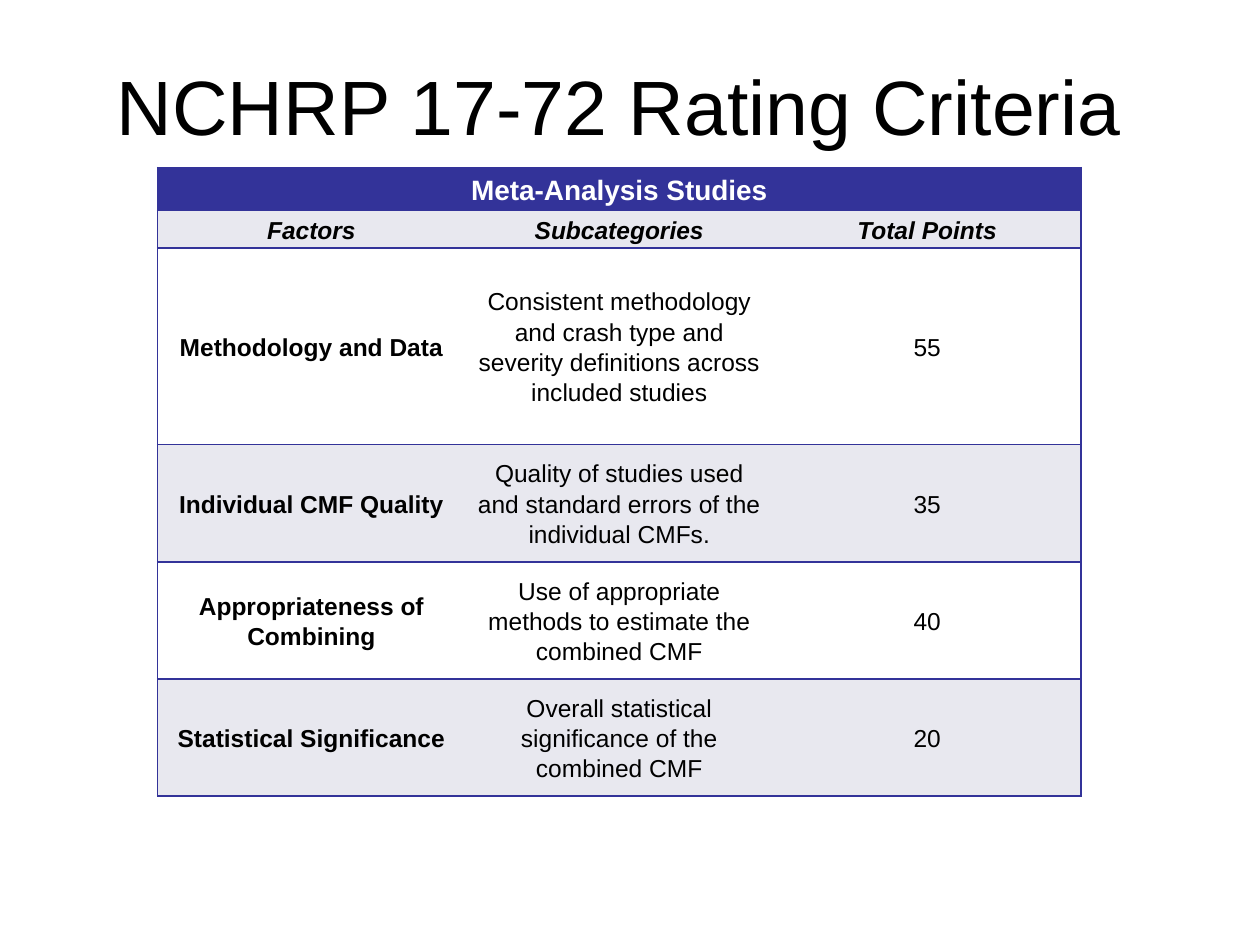
from lxml.etree import SubElement
from pptx import Presentation
from pptx.dml.color import RGBColor
from pptx.enum.text import MSO_ANCHOR as Anchor, PP_ALIGN as Align
from pptx.oxml.ns import qn
from pptx.util import Inches, Pt

TITLE = "NCHRP 17-72 Rating Criteria"
ROWS = [
    ("Meta-Analysis Studies", "", ""),
    ("Factors", "Subcategories", "Total Points"),
    ("Methodology and Data",
     "Consistent methodology and crash type and severity definitions across included studies", "55"),
    ("Individual CMF Quality",
     "Quality of studies used and standard errors of the individual CMFs.", "35"),
    ("Appropriateness of Combining",
     "Use of appropriate methods to estimate the combined CMF", "40"),
    ("Statistical Significance",
     "Overall statistical significance of the combined CMF", "20"),
]
HEIGHTS = [0.34, 0.3, 1.56, 0.93, 0.93, 0.93]
FONT = "Arial"
NAVY, PALE, WHITE, BLACK = "333399", "E8E8EF", "FFFFFF", "000000"


def color(value):
    return RGBColor.from_string(value)


def format_text(frame, size, ink, bold=False, italic=False):
    frame.vertical_anchor = Anchor.MIDDLE
    para = frame.paragraphs[0]
    para.alignment = Align.CENTER
    for span in para.runs:
        font = span.font
        font.name, font.size, font.bold, font.italic = FONT, Pt(size), bold, italic
        font.color.rgb = color(ink)
    return para


def draw_borders(cell, visible):
    properties = cell._tc.get_or_add_tcPr()
    for index, side in enumerate("LRTB"):
        line = SubElement(properties, qn(f"a:ln{side}"), w=str(Pt(1)))
        if side in visible:
            fill = SubElement(line, qn("a:solidFill"))
            SubElement(fill, qn("a:srgbClr"), val=NAVY)
        else:
            SubElement(line, qn("a:noFill"))
        properties.insert(index, line)


def fill_cell(cell, text, row, column):
    banner, heading = row == 0, row == 1
    cell.text = text
    cell.margin_left = cell.margin_right = Inches(0.07)
    cell.margin_top = cell.margin_bottom = 0
    cell.vertical_anchor = Anchor.MIDDLE
    para = format_text(cell.text_frame, 16 if banner else 14, WHITE if banner else BLACK,
                       bold=row < 2 or column == 0, italic=heading)
    para.line_spacing = 1.1
    para.space_after = Pt(6)
    cell.fill.solid()
    cell.fill.fore_color.rgb = color(NAVY if banner else PALE if row % 2 else WHITE)
    sides = {0: "LTB", 1: "TB", 2: "RTB"}
    draw_borders(cell, "LRTB" if banner else sides[column])


def main():
    deck = Presentation()
    deck.slide_width, deck.slide_height = Inches(10), Inches(7.5)
    page = deck.slides.add_slide(deck.slide_layouts[5])

    title = page.shapes.title
    title.left, title.top = Inches(0.25), Inches(0.33)
    title.width, title.height = Inches(9.33), Inches(1)
    title.text_frame.text = TITLE
    format_text(title.text_frame, 44, BLACK)

    table = page.shapes.add_table(len(ROWS), 3, Inches(1.25), Inches(1.33),
                                  Inches(7.33), Inches(sum(HEIGHTS))).table
    for row, (texts, height) in enumerate(zip(ROWS, HEIGHTS)):
        table.rows[row].height = Inches(height)
        for column, text in enumerate(texts):
            fill_cell(table.cell(row, column), text, row, column)
    table.cell(0, 0).merge(table.cell(0, 2))
    deck.save("out.pptx")


if __name__ == "__main__":
    main()
